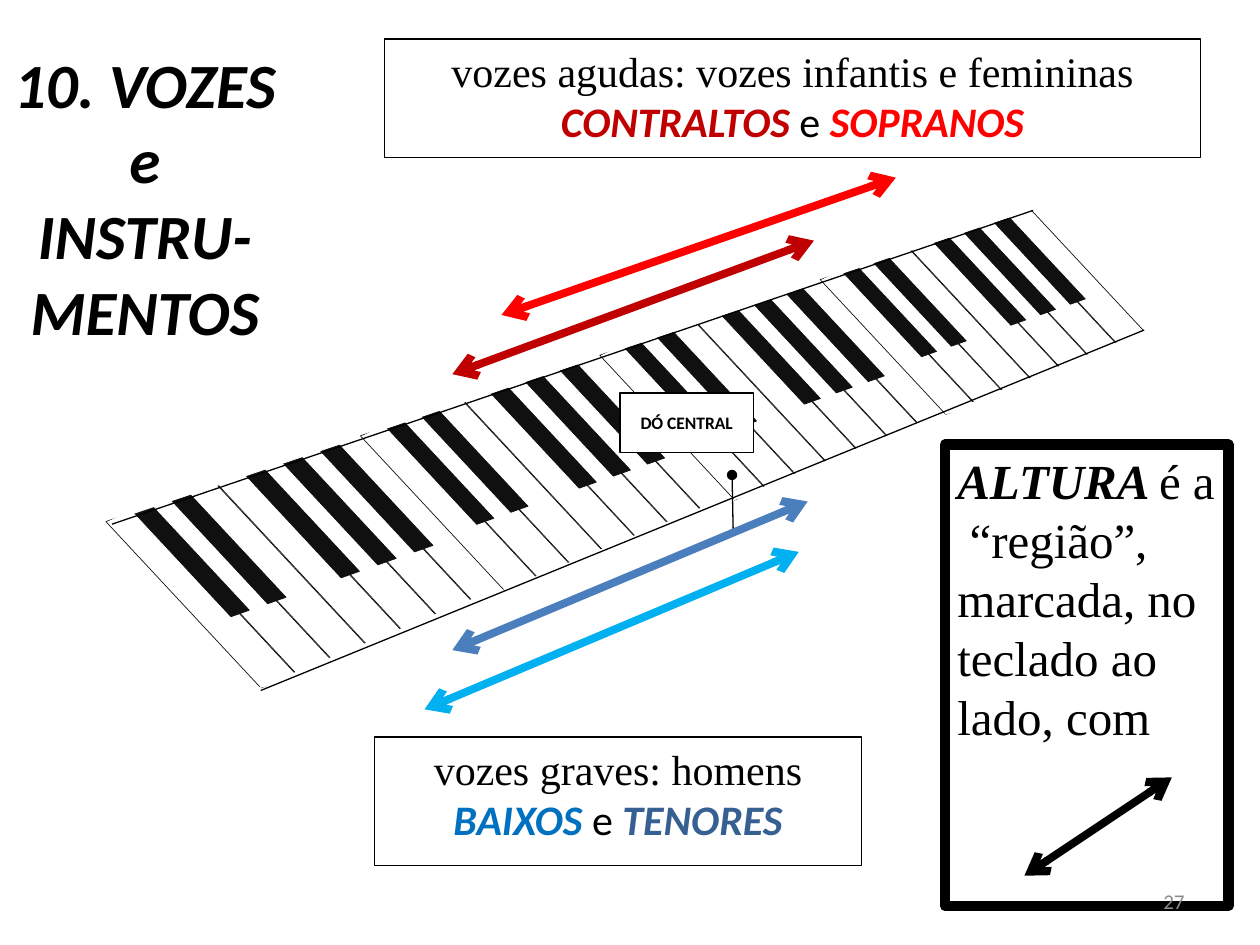
from math import cos, radians, sin

from lxml.etree import SubElement
from pptx import Presentation
from pptx.dml.color import RGBColor
from pptx.enum.shapes import MSO_CONNECTOR as Line, MSO_SHAPE as Preset
from pptx.enum.text import MSO_ANCHOR as Anchor, MSO_AUTO_SIZE as Fit, PP_ALIGN as Align
from pptx.oxml.ns import qn
from pptx.util import Inches, Pt

BLACK = RGBColor(0x00, 0x00, 0x00)
WHITE = RGBColor(0xFF, 0xFF, 0xFF)
EBONY = RGBColor(0x10, 0x10, 0x10)
GREY = RGBColor(0x8C, 0x8C, 0x8C)
RED = RGBColor(0xFF, 0x00, 0x00)
CRIMSON = RGBColor(0xC0, 0x00, 0x00)
SKY = RGBColor(0x00, 0xB0, 0xF0)
STEEL = RGBColor(0x4B, 0x7E, 0xBC)
BLUE = RGBColor(0x00, 0x70, 0xC0)
NAVY = RGBColor(0x37, 0x60, 0x92)

SERIF = {"name": "Times New Roman", "size": Pt(24), "bold": False, "italic": False}
SANS = {**SERIF, "name": "Calibri"}
STRONG = {**SANS, "bold": True, "italic": True}
HEADING = {**STRONG, "size": Pt(36)}
LABEL = {**SANS, "size": Pt(10), "bold": True}
NUMBER = {**SANS, "size": Pt(12)}
LARGE = {**SERIF, "size": Pt(28)}
LARGE_STRONG = {**LARGE, "bold": True, "italic": True}

COLUMNS, ROWS = 10, 7.5
KEY_TILT = 6.5
OCTAVE = (2.04, -0.72)
DEPTH = (1.23, 1.32)
WHITE_KEYS = 7
BLACK_KEYS = (0, 1, 3, 4, 5)
OCTAVES = (((0.84, 4.14), 1), ((2.86, 3.46), 0.93), ((4.76, 2.82), 0.87), ((6.51, 2.22), 0.81))
MASKS = (((2.25, 0.89), (2.21, 0.37), 347, ("flipH",)),
         ((1.07, -0.35), (2.19, 0.36), 332.1, ("flipH", "flipV")))
VOICES = (((3.59, 5.16), (6.41, 3.98), STEEL), ((3.37, 5.63), (6.34, 4.38), SKY),
          ((3.98, 2.5), (7.11, 1.41), RED), ((3.59, 2.97), (6.46, 1.91), CRIMSON))


def scaled(vector, factor):
    """Return the vector multiplied by the factor."""
    return tuple(part * factor for part in vector)


def added(*vectors):
    """Return the sum of the vectors."""
    return tuple(sum(parts) for parts in zip(*vectors))


def turned(vector, degrees):
    """Return the vector turned clockwise on the page."""
    x, y = vector
    angle = radians(degrees)
    return x * cos(angle) - y * sin(angle), x * sin(angle) + y * cos(angle)


class Painter:
    """Draws elements on a grid of columns and rows on the current slide."""

    def __init__(self, deck):
        """Add a blank page and measure its grid."""
        self.page = deck.slides.add_slide(deck.slide_layouts[6])
        self.canvas = self.page.shapes
        self.column = deck.slide_width / COLUMNS
        self.row = deck.slide_height / ROWS

    def place(self, *lengths):
        """Turn alternating columns and rows into slide lengths."""
        units = (self.column, self.row) * 2
        return [round(length * unit) for length, unit in zip(lengths, units)]

    def paint(self, shape, fill, line, width):
        """Give a shape its flat fill and outline."""
        shape.shadow.inherit = False
        shape.fill.solid()
        shape.fill.fore_color.rgb = fill
        shape.line.color.rgb = line
        shape.line.width = Pt(width)

    def add_text(self, box, paragraphs, align, **frame):
        """Fill a box with paragraphs of styled spans."""
        for name, value in {"word_wrap": True, "vertical_anchor": Anchor.TOP, **frame}.items():
            setattr(box.text_frame, name, value)
        for index, spans in enumerate(paragraphs):
            para = box.text_frame.add_paragraph() if index else box.text_frame.paragraphs[0]
            para.alignment = align
            for text, style, color in spans:
                span = para.add_run()
                span.text = text
                for name, value in style.items():
                    setattr(span.font, name, value)
                span.font.color.rgb = color

    def panel(self, area, paragraphs, align=Align.CENTER, width=0.75, **frame):
        """Draw a white outlined box with text."""
        box = self.canvas.add_shape(Preset.RECTANGLE, *self.place(*area))
        self.paint(box, WHITE, BLACK, width)
        self.add_text(box, paragraphs, align, **frame)

    def note(self, area, paragraphs, align, **frame):
        """Add a text box without outline."""
        box = self.canvas.add_textbox(*self.place(*area))
        self.add_text(box, paragraphs, align, **frame)

    def line(self, start, end, color=BLACK, width=0.75, **ends):
        """Draw a straight line with optional end marks."""
        link = self.canvas.add_connector(Line.STRAIGHT, *self.place(*start, *end))
        link.line.color.rgb = color
        link.line.width = Pt(width)
        outline = link.element.spPr.find(qn("a:ln"))
        for end_name, mark in ends.items():
            SubElement(outline, qn(f"a:{end_name}"), type=mark)
        SubElement(link.element.spPr, qn("a:effectLst"))

    def arrow(self, start, end, color=BLACK):
        """Draw a thick arrow with two heads."""
        self.line(start, end, color, 4.5, headEnd="arrow", tailEnd="arrow")

    def key(self, corner, across, down, fill):
        """Draw one slanted key from its upper left corner."""
        center = added(corner, scaled(added(across, down), 0.5))
        half_across, half_down = (turned(scaled(side, 0.5), -KEY_TILT) for side in (across, down))
        points = [self.place(*added(center, scaled(half_across, a), scaled(half_down, d)))
                  for a, d in ((-1, 1), (1, 1), (1, -1), (-1, -1))]
        outline = self.canvas.build_freeform(*points[0])
        outline.add_line_segments(points[1:], close=True)
        shape = outline.convert_to_shape()
        shape.rotation = KEY_TILT
        self.paint(shape, fill, EBONY, 0.4)

    def mask(self, center, size, angle, flips):
        """Draw a white wedge that trims the edge of the keys."""
        corner = added(center, scaled(size, -0.5))
        wedge = self.canvas.add_shape(Preset.RIGHT_TRIANGLE, *self.place(*corner, *size))
        wedge.rotation = angle
        for flip in flips:
            wedge.element.spPr.xfrm.set(flip, "1")
        self.paint(wedge, WHITE, WHITE, 0.4)

    def octave(self, origin, factor):
        """Draw the white and black keys of one octave and its wedges."""
        step = scaled(OCTAVE, factor / WHITE_KEYS)
        depth = scaled(DEPTH, factor)
        for index in range(WHITE_KEYS):
            self.key(added(origin, scaled(step, index)), scaled(step, 0.98), depth, WHITE)
        for index in BLACK_KEYS:
            corner = added(origin, scaled(step, index + 0.75))
            self.key(corner, scaled(step, 0.5), scaled(depth, 0.63), EBONY)
        for offset, size, angle, flips in MASKS:
            center = added(origin, scaled(offset, factor))
            self.mask(center, scaled(size, factor), angle, flips)

    def keyboard(self):
        """Draw the grouped keyboard with its middle C label."""
        self.canvas = self.page.shapes.add_group_shape().shapes
        for origin, factor in OCTAVES:
            self.octave(origin, factor)
        self.line((2.07, 5.48), (9.08, 2.62))
        self.line((0.89, 4.16), (8.2, 1.67))
        margins = dict.fromkeys(("margin_left", "margin_top", "margin_right", "margin_bottom"), 0)
        self.panel((4.92, 3.12, 1.06, 0.47), [[("DÓ CENTRAL", LABEL, BLACK)]],
                   vertical_anchor=Anchor.MIDDLE, **margins)
        self.line((5.82, 4.25), (5.81, 3.77), tailEnd="oval")
        self.canvas = self.page.shapes


def main():
    """Build the slide and save it."""
    deck = Presentation()
    deck.slide_width, deck.slide_height = Inches(10), Inches(7.5)
    painter = Painter(deck)
    painter.keyboard()
    for start, end, color in VOICES:
        painter.arrow(start, end, color)
    painter.panel((3.05, 0.31, 6.48, 0.94), [
        [("vozes agudas: vozes infantis e femininas", SERIF, BLACK)],
        [("CONTRALTOS ", STRONG, CRIMSON), ("e ", SANS, BLACK), ("SOPRANOS", STRONG, RED)]])
    painter.panel((2.97, 5.85, 3.87, 1.02), [
        [("vozes graves: homens ", SERIF, BLACK), ("BAIXOS", STRONG, BLUE),
         (" e ", SANS, BLACK), ("TENORES", STRONG, NAVY)]])
    painter.panel((7.5, 3.53, 2.25, 3.66), [
        [("ALTURA ", LARGE_STRONG, BLACK),
         ("é a  “região”, marcada, no teclado ao lado, com", LARGE, BLACK)]], Align.LEFT, 6)
    painter.arrow((9.3, 6.17), (8.13, 6.95))
    title = ("10. VOZES", "e", "INSTRU-", "MENTOS")
    painter.note((0, 0.31, 2.3, 2.52), [[(text, HEADING, BLACK)] for text in title],
                 Align.CENTER, word_wrap=False, auto_size=Fit.SHAPE_TO_FIT_TEXT)
    painter.note((7.17, 6.95, 2.33, 0.4), [[("27", NUMBER, GREY)]], Align.RIGHT,
                 vertical_anchor=Anchor.MIDDLE)
    deck.save("out.pptx")


if __name__ == "__main__":
    main()
